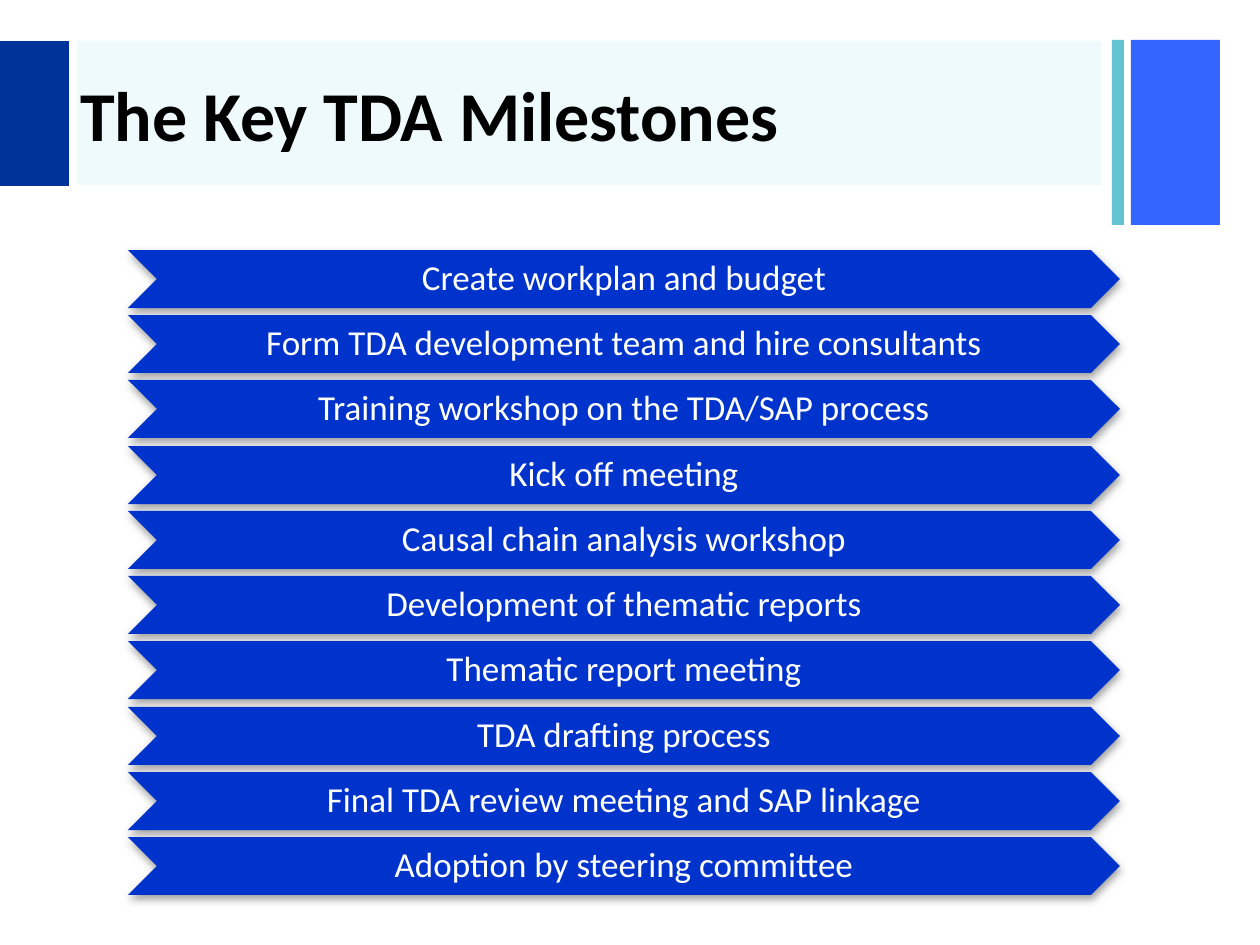
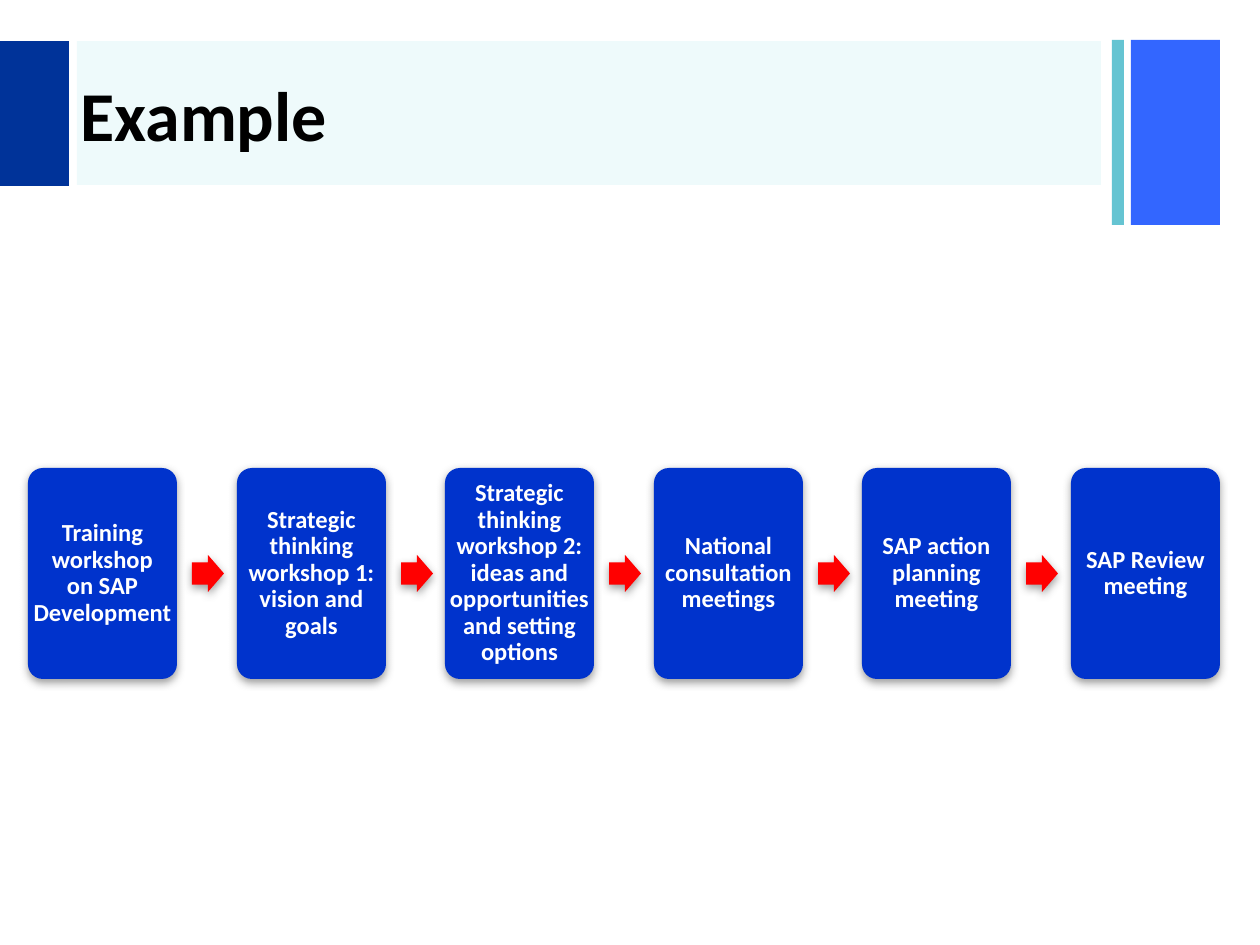
from dataclasses import dataclass

from lxml import etree
from pptx import Presentation
from pptx.dml.color import RGBColor
from pptx.enum.shapes import MSO_SHAPE
from pptx.enum.text import MSO_ANCHOR, PP_ALIGN
from pptx.oxml.ns import qn
from pptx.util import Emu, Pt

RECTANGLE = MSO_SHAPE.RECTANGLE
CHEVRON = MSO_SHAPE.CHEVRON
CARD = MSO_SHAPE.ROUNDED_RECTANGLE
ARROW = MSO_SHAPE.RIGHT_ARROW
MIDDLE = MSO_ANCHOR.MIDDLE
LEFT, CENTER = PP_ALIGN.LEFT, PP_ALIGN.CENTER

PX_PER_INCH = 126
PAGE_WIDTH, PAGE_HEIGHT = 1260, 945


@dataclass(frozen=True)
class Theme:
    font: str = "Calibri"
    title_size: int = 40
    milestone_size: int = 20
    card_size: int = 14
    title_text: str = "000000"
    light_text: str = "FFFFFF"
    step: str = "0033CC"
    arrow: str = "FF0000"
    shadow: str = "808080"
    title_band: str = "14C5D0"
    navy: str = "003399"
    teal: str = "65C4D2"
    blue: str = "3366FF"


MILESTONES = [
    "Create workplan and budget",
    "Form TDA development team and hire consultants",
    "Training workshop on the TDA/SAP process",
    "Kick off meeting",
    "Causal chain analysis workshop",
    "Development of thematic reports",
    "Thematic report meeting",
    "TDA drafting process",
    "Final TDA review meeting and SAP linkage",
    "Adoption by steering committee",
]

EXAMPLE_STEPS = [
    "Training workshop\non SAP Development",
    "Strategic thinking workshop 1: vision and goals",
    "Strategic thinking workshop 2: ideas and opportunities and setting options",
    "National consultation meetings",
    "SAP action planning meeting",
    "SAP Review meeting",
]


def px(length):
    return Emu(round(length * 914400 / PX_PER_INCH))


def spread(start, end, size, count):
    """Starts of equal items that fill the span from start to end."""
    pitch = (end - start - size) / (count - 1)
    return [round(start + index * pitch) for index in range(count)]


def add_alpha(color_element, percent):
    etree.SubElement(color_element, qn("a:alpha"), val=str(percent * 1000))


class Painter:
    def __init__(self, deck, theme):
        self.deck = deck
        self.theme = theme
        self.page = None

    def new_page(self, title):
        self.page = self.deck.slides.add_slide(self.deck.slide_layouts[6])
        # Header bands
        self.shape(RECTANGLE, 1131, 40, 89, 185, self.theme.blue)
        self.shape(RECTANGLE, 1112, 40, 12, 185, self.theme.teal)
        self.shape(RECTANGLE, 77, 41, 1024, 144, self.theme.title_band, alpha=7)
        self.shape(RECTANGLE, 0, 41, 69, 145, self.theme.navy)
        # Title
        box = self.page.shapes.add_textbox(px(68), px(43), px(1042), px(141))
        self.text(box, title, self.theme.title_size, self.theme.title_text,
                  bold=True, align=LEFT)

    def shape(self, kind, left, top, width, height, color, alpha=None, adjustments=()):
        shape = self.page.shapes.add_shape(kind, px(left), px(top), px(width), px(height))
        shape.shadow.inherit = False
        shape.fill.solid()
        shape.fill.fore_color.rgb = RGBColor.from_string(color)
        shape.line.fill.background()
        for index, value in enumerate(adjustments):
            shape.adjustments[index] = value
        if alpha is not None:
            add_alpha(shape.element.spPr.find(".//" + qn("a:srgbClr")), alpha)
        return shape

    def shadowed(self, *args, **options):
        shape = self.shape(*args, **options)
        effects = shape.element.spPr.find(qn("a:effectLst"))
        shadow = etree.SubElement(effects, qn("a:outerShdw"), blurRad=str(Pt(5)),
                                  dist=str(Pt(2)), dir="5400000", rotWithShape="0")
        color = etree.SubElement(shadow, qn("a:srgbClr"), val=self.theme.shadow)
        add_alpha(color, 75)
        return shape

    def text(self, box, words, size, color, bold=False, align=CENTER, spacing=None):
        frame = box.text_frame
        frame.word_wrap = True
        frame.vertical_anchor = MIDDLE
        para = frame.paragraphs[0]
        para.text = words
        para.alignment = align
        para.line_spacing = spacing
        para.font.name = self.theme.font
        para.font.size = Pt(size)
        para.font.bold = bold
        para.font.color.rgb = RGBColor.from_string(color)

    def step(self, kind, left, top, width, height, words, size, bold=False,
             margin=0, adjustments=()):
        shape = self.shadowed(kind, left, top, width, height, self.theme.step,
                              adjustments=adjustments)
        frame = shape.text_frame
        frame.margin_left = frame.margin_right = 0
        frame.margin_top = frame.margin_bottom = px(margin)
        self.text(shape, words, size, self.theme.light_text, bold, spacing=0.9)

    def arrow(self, left, top, width, height):
        self.shadowed(ARROW, left, top, width, height, self.theme.arrow,
                      adjustments=(0.6, 0.5))


def milestones_page(painter):
    painter.new_page("The Key TDA Milestones")
    height = 58
    tops = spread(250, 895, height, len(MILESTONES))
    for top, milestone in zip(tops, MILESTONES):
        painter.step(CHEVRON, 128, top, 992, height, milestone,
                     painter.theme.milestone_size, margin=1)


def example_page(painter):
    painter.new_page("Example")
    width = 149
    lefts = spread(28, 1220, width, len(EXAMPLE_STEPS))
    for left, words in zip(lefts, EXAMPLE_STEPS):
        painter.step(CARD, left, 468, width, 211, words, painter.theme.card_size,
                     bold=True, margin=7, adjustments=(0.1,))
    # Arrows in the gaps between cards
    for left in lefts[:-1]:
        painter.arrow(left + width + 15, 555, 32, 37)


def main():
    deck = Presentation()
    deck.slide_width, deck.slide_height = px(PAGE_WIDTH), px(PAGE_HEIGHT)
    painter = Painter(deck, Theme())
    milestones_page(painter)
    example_page(painter)
    deck.save("out.pptx")


if __name__ == "__main__":
    main()
